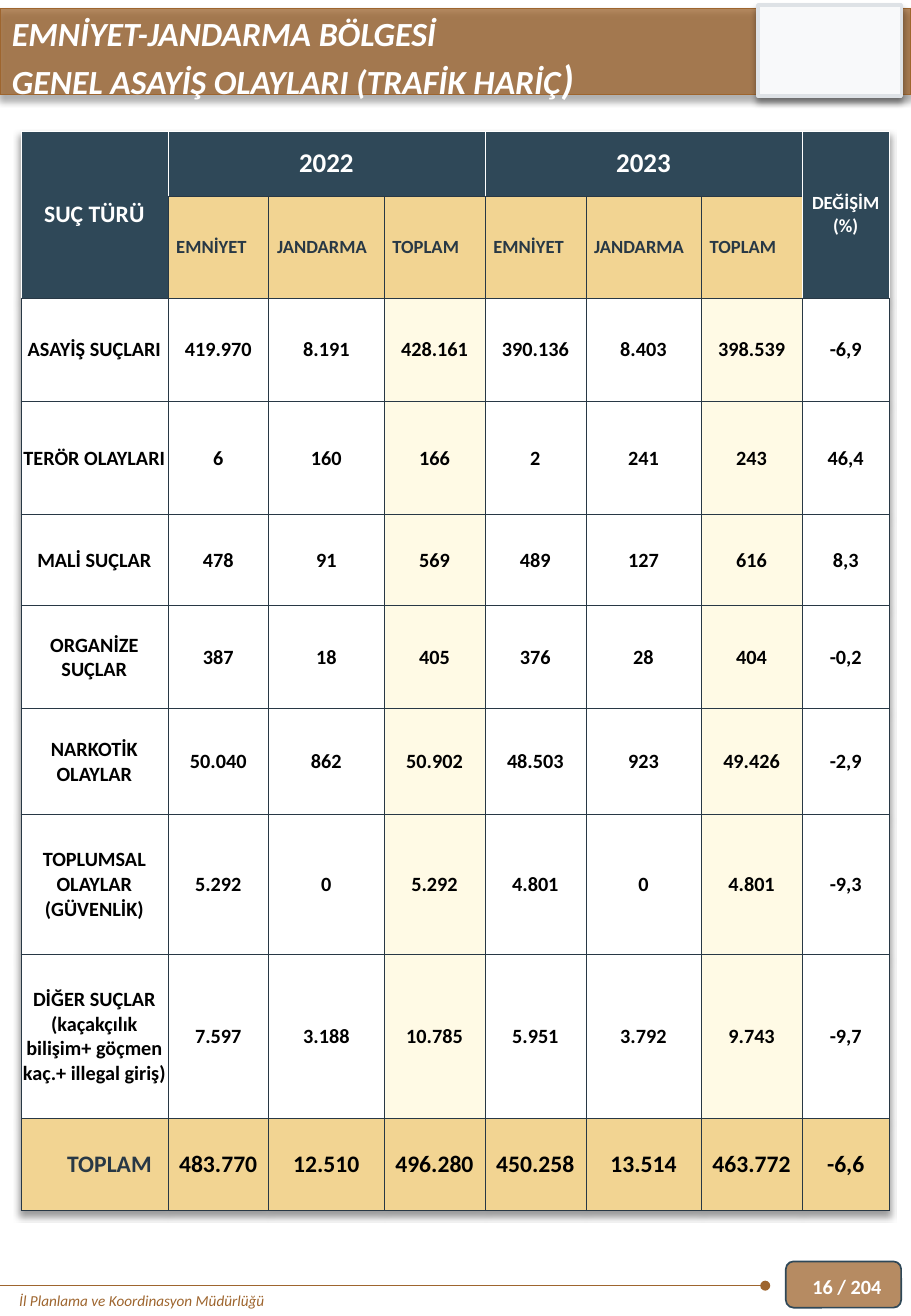
from lxml import etree
from pptx import Presentation
from pptx.dml.color import RGBColor
from pptx.enum.shapes import MSO_CONNECTOR, MSO_SHAPE
from pptx.enum.text import MSO_ANCHOR, PP_ALIGN
from pptx.oxml.ns import qn
from pptx.util import Pt

RECT, ROUND = MSO_SHAPE.RECTANGLE, MSO_SHAPE.ROUNDED_RECTANGLE
LINE = MSO_CONNECTOR.STRAIGHT
MIDDLE = MSO_ANCHOR.MIDDLE
LEFT, CENTER = PP_ALIGN.LEFT, PP_ALIGN.CENTER
HEX = {"brown": "9E652E", "navy": "2F4858", "ink": "283845", "sand": "F2D492",
       "cream": "FFFAE5", "white": "FFFFFF", "black": "000000",
       "pale": "F8F9FA", "gray": "DEE2E6"}
RGB = {name: RGBColor.from_string(code) for name, code in HEX.items()}


def style(frame, size, color, bold=True, italic=False, align=LEFT):
    for para in frame.paragraphs:
        para.alignment = align
        font = para.font
        font.name, font.size = "Calibri", Pt(size)
        font.bold, font.italic = bold, italic
        font.color.rgb = RGB[color]


def shade(effects):
    glow = etree.SubElement(effects, qn("a:outerShdw"), blurRad=str(Pt(4)),
                            dist=str(Pt(3)), dir="5400000", algn="t", rotWithShape="0")
    tone = etree.SubElement(glow, qn("a:srgbClr"), val=HEX["black"])
    etree.SubElement(tone, qn("a:alpha"), val="40000")


deck = Presentation()
deck.slide_width, deck.slide_height = Pt(540), Pt(779.76)
slide = deck.slides.add_slide(deck.slide_layouts[6])
shapes = slide.shapes

panels = [
    (ROUND, 465.8, 747.4, 68.4, 27.4, "brown", 75, "navy", 1, False),
    (RECT, 0, 5, 540, 51.1, "brown", 75, "brown", 1, True),
    (RECT, 449.3, 2.9, 85, 54, "pale", 100, "gray", 2, True),
]
for kind, x, y, w, h, fill, alpha, edge, width, cast in panels:
    panel = shapes.add_shape(kind, Pt(x), Pt(y), Pt(w), Pt(h))
    panel.fill.solid()
    panel.fill.fore_color.rgb = RGB[fill]
    panel.line.color.rgb = RGB[edge]
    panel.line.width = Pt(width)
    panel.shadow.inherit = False
    props = panel.element.spPr
    if alpha < 100:
        tone = props.find(qn("a:solidFill"))[0]
        etree.SubElement(tone, qn("a:alpha"), val=str(alpha * 1000))
    if cast:
        shade(props.find(qn("a:effectLst")))

rule = shapes.add_connector(LINE, Pt(453.6), Pt(761.8), Pt(0), Pt(761.8))
rule.line.color.rgb = RGB["brown"]
rule.line.width = Pt(0.5)
etree.SubElement(rule.line._get_or_add_ln(), qn("a:headEnd"), type="oval")
etree.SubElement(rule.element.spPr, qn("a:effectLst"))

labels = [
    ("İl Planlama ve Koordinasyon Müdürlüğü", 4.3, 761.8, 337.7, 18, 9, "brown", False, True),
    ("EMNİYET-JANDARMA BÖLGESİ\nGENEL ASAYİŞ OLAYLARI (TRAFİK HARİÇ",
     0, 4.3, 540, 60.5, 20, "white", True, True),
    ("16 / 204", 474.5, 747.4, 82.8, 30.2, 12, "white", True, False),
]
frames = []
for text, x, y, w, h, size, color, bold, italic in labels:
    frame = shapes.add_textbox(Pt(x), Pt(y), Pt(w), Pt(h)).text_frame
    frame.word_wrap = True
    frame.text = text
    style(frame, size, color, bold, italic)
    frames.append(frame)
foot, title, page = frames
page.vertical_anchor = MIDDLE
close = title.paragraphs[1].add_run()
close.text = ")"
close.font.size = Pt(24)

widths = [87.1, 59.8, 68.4, 59.8, 59.8, 68.4, 59.8, 51.8]
heights = [38.2, 60.5, 61.2, 67, 54, 61.2, 62.6, 82.8, 97.2, 54.7]
units = ["EMNİYET", "JANDARMA", "TOPLAM"]
rows = [
    ["SUÇ TÜRÜ", "2022", "", "", "2023", "", "", "DEĞİŞİM\n(%)"],
    ["", *units, *units, ""],
    ["ASAYİŞ SUÇLARI", "419.970", "8.191", "428.161", "390.136", "8.403", "398.539", "-6,9"],
    ["TERÖR OLAYLARI", "6", "160", "166", "2", "241", "243", "46,4"],
    ["MALİ SUÇLAR", "478", "91", "569", "489", "127", "616", "8,3"],
    ["ORGANİZE SUÇLAR", "387", "18", "405", "376", "28", "404", "-0,2"],
    ["NARKOTİK OLAYLAR", "50.040", "862", "50.902", "48.503", "923", "49.426", "-2,9"],
    ["TOPLUMSAL OLAYLAR (GÜVENLİK)", "5.292", "0", "5.292", "4.801", "0", "4.801", "-9,3"],
    ["DİĞER SUÇLAR (kaçakçılık bilişim+ göçmen kaç.+ illegal giriş)",
     "7.597", "3.188", "10.785", "5.951", "3.792", "9.743", "-9,7"],
    ["TOPLAM", "483.770", "12.510", "496.280", "450.258", "13.514", "463.772", "-6,6"],
]
last = len(rows) - 1
holder = shapes.add_table(len(rows), len(widths), Pt(12.4), Pt(77.8),
                          Pt(sum(widths)), Pt(sum(heights)))
table = holder.table
table.first_row = table.horz_banding = False
effects = etree.Element(qn("a:effectLst"))
shade(effects)
table._tbl.tblPr.insert(0, effects)
for col, width in zip(table.columns, widths):
    col.width = Pt(width)
for row, height in zip(table.rows, heights):
    row.height = Pt(height)

for r, row in enumerate(rows):
    for c, text in enumerate(row):
        cell = table.cell(r, c)
        head = r == 0 or r == 1 and c in (0, 7)
        size, color, align, fill = 12, "black", CENTER, "white"
        if head:
            size = {0: 14, 7: 11}.get(c, 16)
            color, fill = "white", "navy"
        elif r == 1:
            size, color, align, fill = 11, "ink", LEFT, "sand"
        elif r == last:
            size, fill = 14, "sand"
            if c == 0:
                color, align = "ink", LEFT
        elif c in (3, 6):
            fill = "cream"
        if r > 1:
            cell.margin_left = Pt(27.4 if r == last and c == 0 else 0.7)
            cell.margin_right = cell.margin_top = Pt(0.7)
            cell.margin_bottom = Pt(0)
        else:
            cell.margin_left = cell.margin_right = Pt(5)
            cell.margin_top = cell.margin_bottom = Pt(2.9)
        cell.vertical_anchor = MIDDLE
        cell.text = text
        style(cell.text_frame, size, color, align=align)
        props = cell._tc.get_or_add_tcPr()
        for side in ("L", "R", "T", "B"):
            edge = etree.SubElement(props, qn("a:ln" + side), w=str(Pt(0.25)))
            paint = etree.SubElement(edge, qn("a:solidFill"))
            tint = "white" if head and side != "B" else "ink"
            etree.SubElement(paint, qn("a:srgbClr"), val=HEX[tint])
        cell.fill.solid()
        cell.fill.fore_color.rgb = RGB[fill]

for top, left, bottom, right in [(0, 0, 1, 0), (0, 1, 0, 3), (0, 4, 0, 6), (0, 7, 1, 7)]:
    table.cell(top, left).merge(table.cell(bottom, right))

deck.save("out.pptx")
